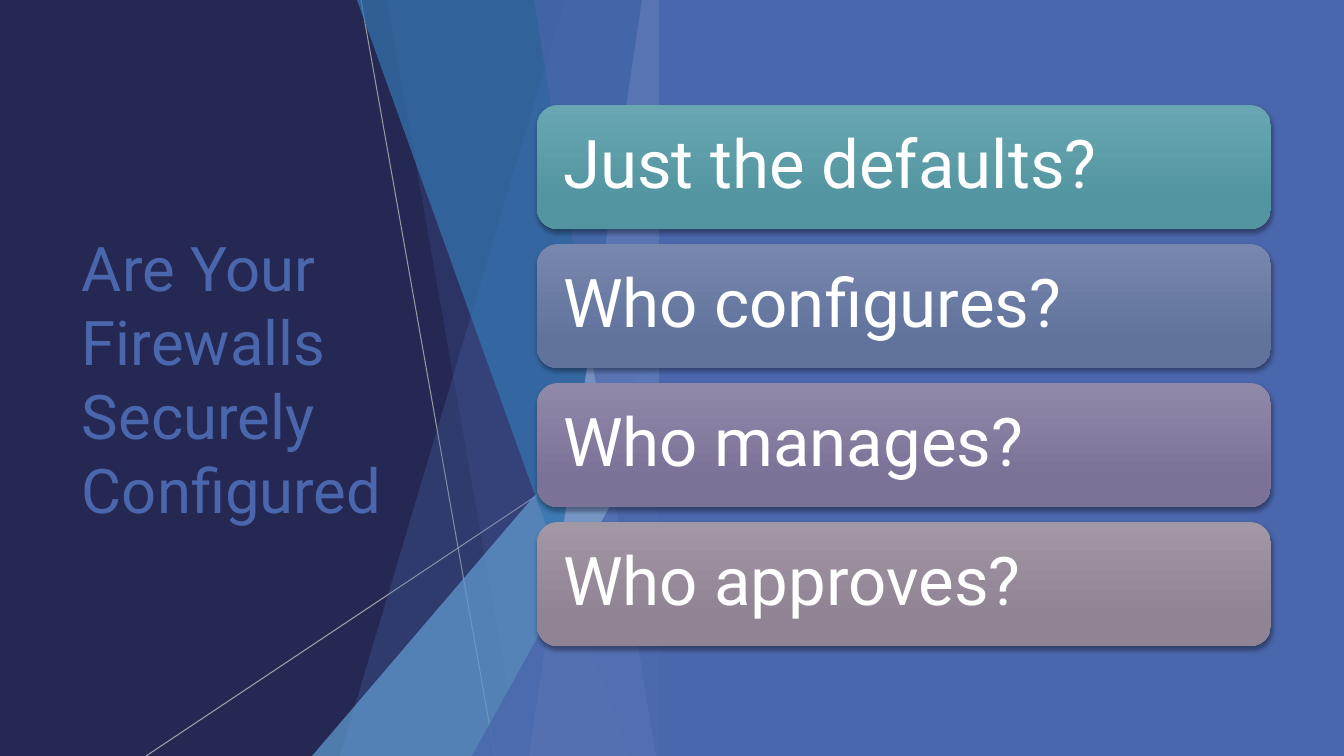
from pptx import Presentation, util as u
from pptx.dml.color import RGBColor
from pptx.enum import shapes, text
from pptx.oxml import parse_xml
from pptx.oxml.ns import nsdecls, qn
from lxml import etree

SCALE = 12192000 / 1344
FONT = "Roboto"
NAVY, BLUE, WHITE, GREY = "242852", "4A66AC", "FFFFFF", "BFBFBF"
LIGHT, DEEP, PALE = "629DD1", "3477B2", "90A2CF"

LINES = [(49, 0, 183, 756, 75), (359, 406, -166, 756, 80)]
FACETS = [
    (253, 0, 28, BLUE, 30),
    (75, 0, 208, BLUE, 20),
    (359, 336, 0, LIGHT, 72),
    (45, 0, 317, DEEP, 70),
    (330, 0, 217, PALE, 70),
    (222, 0, 344, BLUE, 65),
    (359, 396, 160, BLUE, 80),
]
CARDS = [
    ("Just the defaults?", "68A7B2", "5295A0"),
    ("Who configures?", "7887AD", "61739D"),
    ("Who manages?", "9088A8", "7C7298"),
    ("Who approves?", "A297A5", "908394"),
]


def px(n):
    """Turn px into EMU."""
    return u.Emu(round(n * SCALE))


def rgb(value):
    """Turn a hex string into a colour."""
    return RGBColor.from_string(value)


def paint(shape, color, opacity=100):
    """Give a shape a flat fill without line or shadow."""
    shape.shadow.inherit = False
    shape.line.fill.background()
    shape.fill.solid()
    shape.fill.fore_color.rgb = rgb(color)
    fade(shape, opacity)


def fade(shape, opacity):
    """Set the opacity of the only colour of a shape."""
    if opacity < 100:
        clr = next(shape._element.spPr.iter(qn("a:srgbClr")))
        etree.SubElement(clr, qn("a:alpha")).set("val", str(opacity * 1000))


def write(tf, words, size, color):
    """Write one middle-anchored, left-aligned paragraph."""
    tf.word_wrap = True
    tf.vertical_anchor = text.MSO_ANCHOR.MIDDLE
    p = tf.paragraphs[0]
    p.alignment = text.PP_ALIGN.LEFT
    r = p.add_run()
    r.text = words
    r.font.name = FONT
    r.font.size = u.Pt(size)
    r.font.color.rgb = rgb(color)
    return p


def add_title(s, x, y, w, h):
    """Place the slide title."""
    tf = s.shapes.add_textbox(px(x), px(y), px(w), px(h)).text_frame
    write(tf, "Are Your Firewalls Securely Configured", 44, BLUE)


def add_facets(s, x, y, w, h):
    """Place the thin lines and the translucent facets ending at the right edge."""
    for x1, y1, x2, y2, opacity in LINES:
        line = s.shapes.add_connector(
            shapes.MSO_CONNECTOR.STRAIGHT, px(x + x1), px(y + y1), px(x + x2), px(y + y2))
        line.line.width = u.Pt(0.75)
        line.line.color.rgb = rgb(GREY)
        fade(line, opacity)
        etree.SubElement(line._element.spPr, qn("a:effectLst"))
    for top_x, top_y, foot_x, color, opacity in FACETS:
        if top_x == w:
            facet = s.shapes.add_shape(
                shapes.MSO_SHAPE.ISOSCELES_TRIANGLE,
                px(x + foot_x), px(y + top_y), px(w - foot_x), px(h - top_y))
            facet.adjustments[0] = 1
        else:
            outline = s.shapes.build_freeform(x + top_x, y + top_y, scale=SCALE)
            outline.add_line_segments(
                [(x + w, y + top_y), (x + w, y + h), (x + foot_x, y + h)])
            facet = outline.convert_to_shape()
        paint(facet, color, opacity)


def add_panel(s, x, y, w, h):
    """Place the plain panel behind the cards."""
    panel = s.shapes.add_shape(shapes.MSO_SHAPE.RECTANGLE, px(x), px(y), px(w), px(h))
    paint(panel, BLUE)


def add_card(s, x, y, w, h, words, top, bottom):
    """Place one rounded card with a gradient, a soft shadow and its question."""
    sp = s.shapes.add_shape(shapes.MSO_SHAPE.ROUNDED_RECTANGLE, px(x), px(y), px(w), px(h))
    sp.line.fill.background()
    sp.fill.gradient()
    sp.fill.gradient_angle = 270
    for stop, position, color in zip(sp.fill.gradient_stops, (0, 0.78), (top, bottom)):
        stop.position = position
        stop.color.rgb = rgb(color)
    sp._element.spPr.append(parse_xml(
        f'<a:effectLst {nsdecls("a")}><a:outerShdw blurRad="{u.Pt(3)}" dist="{u.Pt(2)}" '
        'dir="5400000" algn="ctr" rotWithShape="0"><a:srgbClr val="000000">'
        '<a:alpha val="35000"/></a:srgbClr></a:outerShdw></a:effectLst>'))
    tf = sp.text_frame
    tf.margin_left = tf.margin_right = tf.margin_top = tf.margin_bottom = px(20)
    write(tf, words, 48, WHITE).line_spacing = 0.9


def add_cards(s, x, y, w, h, gap):
    """Stack the cards evenly in the box."""
    card_h = (h - gap * (len(CARDS) - 1)) / len(CARDS)
    for i, card in enumerate(CARDS):
        add_card(s, x, y + i * (card_h + gap), w, card_h, *card)


def main():
    """Build and save the slide."""
    prs = Presentation()
    prs.slide_width, prs.slide_height = px(1344), px(756)
    s = prs.slides.add_slide(prs.slide_layouts[6])
    s.background.fill.solid()
    s.background.fill.fore_color.rgb = rgb(NAVY)
    add_title(s, 72, 152, 391, 452)
    add_facets(s, 312, 0, 359, 756)
    add_panel(s, 659, 0, 685, 756)
    add_cards(s, 537, 105, 734, 541, 15)
    prs.save("out.pptx")


if __name__ == "__main__":
    main()
